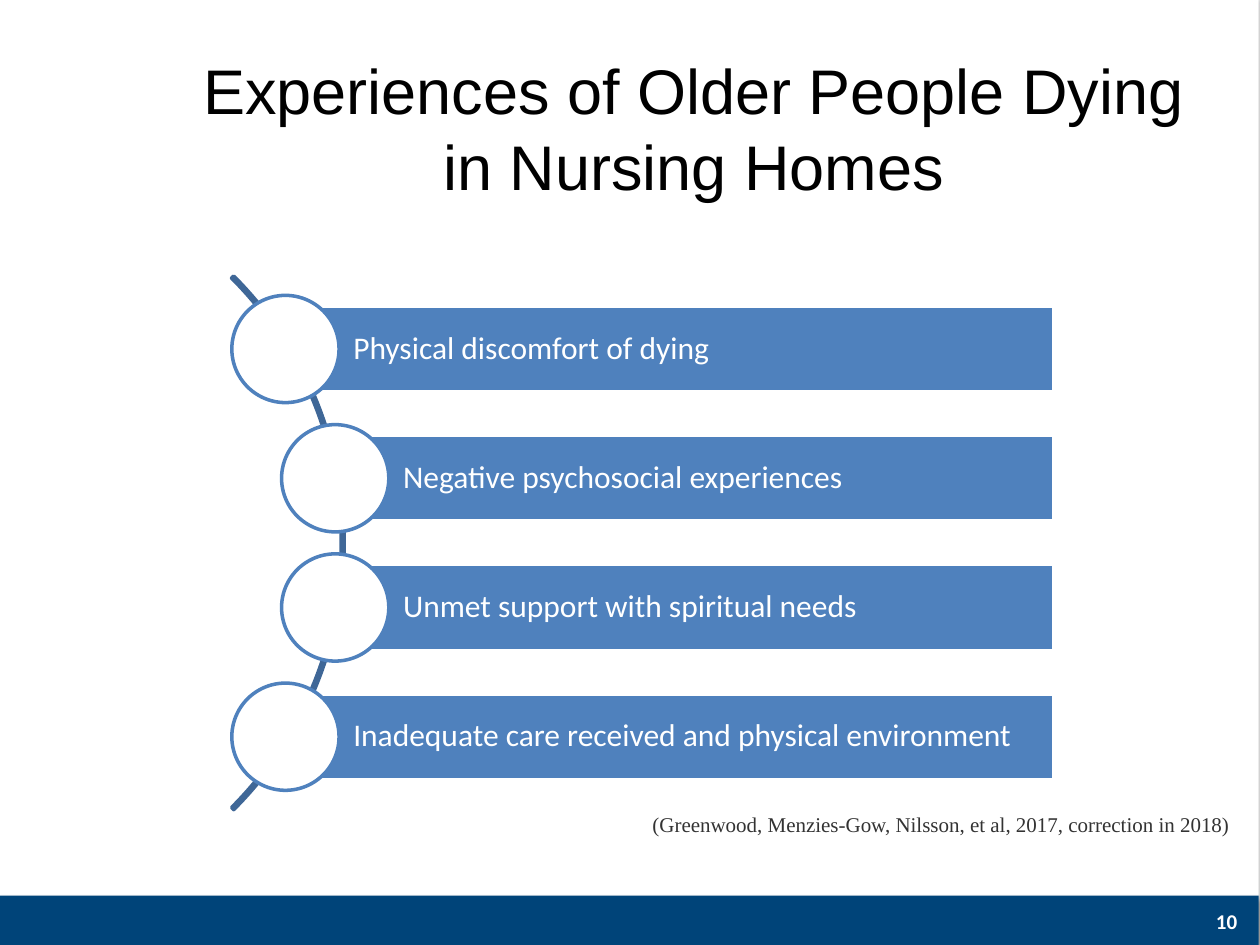
from collections import namedtuple

from lxml.etree import SubElement
from pptx import Presentation
from pptx.dml.color import RGBColor
from pptx.enum.shapes import MSO_SHAPE as Shape
from pptx.enum.text import MSO_ANCHOR as Anchor, PP_ALIGN as Align
from pptx.oxml.ns import qn
from pptx.util import Emu, Inches, Pt

Box = namedtuple("Box", "left top width height")
WHITE, NAVY, BLUE, ARC_BLUE = "FFFFFF", "004479", "4F81BD", "3F6797"
THEMES = [
    ("Physical discomfort of dying", 0),
    ("Negative psychosocial experiences", 1),
    ("Unmet support with spiritual needs", 1),
    ("Inadequate care received and physical environment", 0),
]


def color(hex_code):
    """Turn a hex string into a colour."""
    return RGBColor.from_string(hex_code)


def share(box, left, top, width, height):
    """Return the part of a box given as shares of its size."""
    return Box(Emu(int(box.left + left * box.width)),
               Emu(int(box.top + top * box.height)),
               Emu(int(width * box.width)), Emu(int(height * box.height)))


def add_figure(slide, kind, box, fill=None, line=None):
    """Add a flat preset shape with an optional fill and outline."""
    figure = slide.shapes.add_shape(kind, *map(int, box))
    figure.shadow.inherit = False
    if fill:
        figure.fill.solid()
        figure.fill.fore_color.rgb = color(fill)
    else:
        figure.fill.background()
    if line:
        figure.line.color.rgb = color(line)
        figure.line.width = Pt(2)
    else:
        figure.line.fill.background()
    return figure


def add_shadow(figure):
    """Give a shape a soft shadow that falls downwards."""
    effects = figure.element.spPr.find(qn("a:effectLst"))
    shadow = SubElement(effects, qn("a:outerShdw"), blurRad=str(Pt(3.1)),
                        dist=str(Pt(1.8)), dir="5400000", rotWithShape="0")
    shade = SubElement(shadow, qn("a:srgbClr"), val="000000")
    SubElement(shade, qn("a:alpha"), val="35000")


def write(holder, text, size, font, ink, align=Align.LEFT, anchor=Anchor.MIDDLE, bold=False):
    """Write one run into a shape and return its paragraph."""
    frame = holder.text_frame
    frame.word_wrap = True
    frame.vertical_anchor = anchor
    paragraph = frame.paragraphs[0]
    paragraph.alignment = align
    run = paragraph.add_run()
    run.text = text
    run.font.size = Pt(size)
    run.font.name = font
    run.font.bold = bold
    run.font.color.rgb = color(ink)
    return paragraph


def add_backdrop(slide, page):
    """Lay the white page, the navy footer and the page number."""
    for band, fill in ((share(page, 0, 0, 1, 1), WHITE),
                       (share(page, 0, 0.948, 1, 0.052), NAVY)):
        add_shadow(add_figure(slide, Shape.RECTANGLE, band, fill))
    number = slide.shapes.add_textbox(*share(page, 0.949, 0.948, 0.051, 0.053))
    write(number, "10", 12, "Calibri", WHITE, Align.CENTER, bold=True)


def add_title(slide, box):
    """Write the centred slide title."""
    title = slide.shapes.add_textbox(*box)
    write(title, "Experiences of Older People Dying in Nursing Homes",
          36, "Arial", "000000", Align.CENTER)


def add_citation(slide, box):
    """Write the indented source line."""
    citation = slide.shapes.add_textbox(*box)
    paragraph = write(citation,
                      "(Greenwood, Menzies-Gow, Nilsson, et al, 2017, correction in 2018)",
                      12, "Times New Roman", "333333", anchor=Anchor.TOP)
    paragraph.line_spacing = 1.15
    paragraph.space_before = Pt(7.5)
    properties = paragraph._p.get_or_add_pPr()
    properties.set("marL", str(Inches(0.38)))
    properties.set("indent", "0")


def add_themes(slide, box):
    """Hang one bar and circle per theme along a curved spine."""
    row = box.height / len(THEMES)
    right = box.left + box.width
    span = 5.84 * row
    arc = add_figure(slide, Shape.BLOCK_ARC,
                     Box(box.left - 2.05 * row - span / 2,
                         box.top + (box.height - span) / 2, span, span),
                     line=ARC_BLUE)
    for index, value in enumerate((189, 27, 0.004)):
        arc.adjustments[index] = value
    circle, bar_height = 0.83 * row, 0.665 * row
    for index, (theme, step) in enumerate(THEMES):
        middle = box.top + (index + 0.5) * row
        left = box.left + 0.385 * row * step
        bar_left = left + circle / 2
        bar = add_figure(slide, Shape.RECTANGLE,
                         Box(bar_left, middle - bar_height / 2, right - bar_left, bar_height),
                         BLUE, WHITE)
        frame = bar.text_frame
        frame.margin_left = int(0.525 * row)
        frame.margin_right = frame.margin_top = frame.margin_bottom = Inches(0.05)
        write(bar, theme, 18, "Calibri", WHITE).line_spacing = 0.9
        add_figure(slide, Shape.OVAL, Box(left, middle - circle / 2, circle, circle), WHITE, BLUE)


def main():
    """Build the slide and save it."""
    deck = Presentation()
    deck.slide_width, deck.slide_height = Inches(10), Inches(7.5)
    slide = deck.slides.add_slide(deck.slide_layouts[6])
    page = Box(0, 0, deck.slide_width, deck.slide_height)
    add_backdrop(slide, share(page, -0.001, -0.004, 1, 1.004))
    add_citation(slide, share(page, 0.47, 0.848, 0.518, 0.044))
    add_themes(slide, share(page, 0.184, 0.301, 0.652, 0.547))
    add_title(slide, share(page, 0.151, 0.051, 0.799, 0.167))
    deck.save("out.pptx")


if __name__ == "__main__":
    main()
